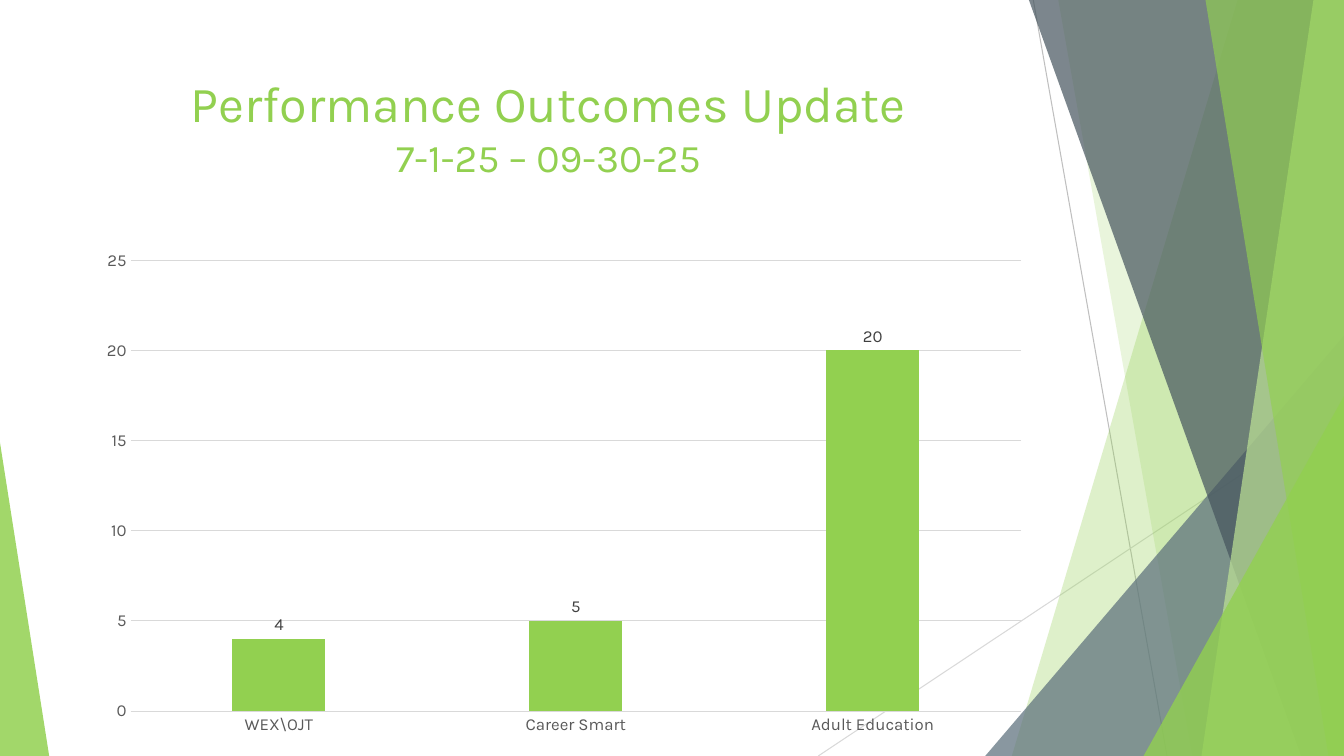
"""Build the performance outcomes slide with its faceted green border."""
import pptx
import pptx.chart.data
import pptx.dml.color
import pptx.enum.chart
import pptx.enum.shapes
import pptx.enum.text
import pptx.oxml
import pptx.oxml.ns
import pptx.util
from lxml import etree
from pptx.dml.color import RGBColor
from pptx.util import Cm

FONT = "Karla"
GREEN = RGBColor(0x92, 0xD0, 0x50)
PALE_GREEN = RGBColor(0xBE, 0xE3, 0x96)
SLATE = RGBColor(0x5C, 0x70, 0x7C)
DARK_SLATE = RGBColor(0x45, 0x54, 0x5D)
GREY = RGBColor(0xBF, 0xBF, 0xBF)
LIGHT_GREY = RGBColor(0xD9, 0xD9, 0xD9)
AXIS_TEXT = RGBColor(0x59, 0x59, 0x59)
LABEL_TEXT = RGBColor(0x40, 0x40, 0x40)

WIDTH, HEIGHT = 33.87, 19.05
CONTENT_LEFT, CONTENT_WIDTH = 1.88, 23.88
PLOT_AREA = {"x": 0.059, "y": 0.021, "w": 0.94, "h": 0.819}


def format_font(font, size, color):
    """Apply the slide's typeface with a size and colour."""
    font.name = FONT
    font.size = pptx.util.Pt(size)
    font.color.rgb = color


def add_text(paragraph, text, size=12, color=GREEN):
    """Append one formatted run to a paragraph."""
    run = paragraph.add_run()
    run.text = text
    format_font(run.font, size, color)


def format_line(line, color):
    """Give a line the slide's thin stroke."""
    line.color.rgb = color
    line.width = pptx.util.Pt(0.75)


def fill_translucent(shape, color, opacity):
    """Fill a facet with a partly transparent colour and no outline."""
    shape.shadow.inherit = False
    shape.line.fill.background()
    shape.fill.solid()
    shape.fill.fore_color.rgb = color
    color_element = next(shape.element.spPr.iter(pptx.oxml.ns.qn("a:srgbClr")))
    alpha = etree.SubElement(color_element, pptx.oxml.ns.qn("a:alpha"))
    alpha.set("val", str(opacity * 1000))


def add_thin_line(slide, start, end, color):
    """Draw a thin straight line between two points."""
    connector = slide.shapes.add_connector(
        pptx.enum.shapes.MSO_CONNECTOR.STRAIGHT, *map(Cm, start + end))
    format_line(connector.line, color)
    etree.SubElement(connector.element.spPr, pptx.oxml.ns.qn("a:effectLst"))


def add_panel(slide, top_left, bottom_left, color, opacity):
    """Draw a slanted panel that reaches the right edge of the slide."""
    points = [(WIDTH, 0), (WIDTH, HEIGHT), (bottom_left, HEIGHT)]
    builder = slide.shapes.build_freeform(Cm(top_left), 0)
    builder.add_line_segments([(Cm(x), Cm(y)) for x, y in points])
    fill_translucent(builder.convert_to_shape(), color, opacity)


def add_corner(slide, width, height, apex, color, opacity):
    """Draw a bottom corner triangle, on the right for apex 1, left for 0."""
    shape = slide.shapes.add_shape(
        pptx.enum.shapes.MSO_SHAPE.ISOSCELES_TRIANGLE,
        Cm(apex * (WIDTH - width)), Cm(HEIGHT - height), Cm(width), Cm(height))
    shape.adjustments[0] = apex
    fill_translucent(shape, color, opacity)


def add_border(slide):
    """Draw the layered facets from back to front."""
    add_thin_line(slide, (26.04, 0), (29.41, HEIGHT), GREY)
    add_thin_line(slide, (WIDTH, 10.24), (20.62, HEIGHT), LIGHT_GREY)
    add_panel(slide, 31.19, 25.5, GREEN, 30)
    add_panel(slide, 26.67, 30.05, GREEN, 20)
    add_corner(slide, 9.04, 10.59, 1, SLATE, 72)
    add_panel(slide, 25.93, 32.79, DARK_SLATE, 70)
    add_panel(slide, 33.1, 30.28, PALE_GREEN, 70)
    add_panel(slide, 30.38, 33.48, GREEN, 65)
    add_corner(slide, 5.05, 9.07, 1, GREEN, 80)
    add_corner(slide, 1.24, 7.9, 0, GREEN, 85)


def add_title(slide):
    """Place the two-line title in front of the border."""
    title = slide.shapes.title
    title.left, title.top = Cm(CONTENT_LEFT), Cm(1.7)
    title.width, title.height = Cm(CONTENT_WIDTH), Cm(3.66)
    frame = title.text_frame
    frame.auto_size = pptx.enum.text.MSO_AUTO_SIZE.NONE
    frame.vertical_anchor = pptx.enum.text.MSO_ANCHOR.TOP
    paragraph = frame.paragraphs[0]
    paragraph.alignment = pptx.enum.text.PP_ALIGN.CENTER
    add_text(paragraph, "Performance Outcomes Update", size=36)
    paragraph.add_line_break()
    add_text(paragraph, "7-1-25 – 09-30-25", size=28)
    slide.shapes.element.append(title.element)


def set_plot_area(chart):
    """Fix the inner plot area as fractions of the chart frame."""
    plot_area = next(chart.element.iter(pptx.oxml.ns.qn("c:plotArea")))
    for layout in plot_area.findall(pptx.oxml.ns.qn("c:layout")):
        plot_area.remove(layout)
    modes = '<c:xMode val="edge"/><c:yMode val="edge"/>'
    sizes = "".join(f'<c:{key} val="{value}"/>' for key, value in PLOT_AREA.items())
    plot_area.insert(0, pptx.oxml.parse_xml(
        f'<c:layout {pptx.oxml.ns.nsdecls("c")}><c:manualLayout>'
        f'<c:layoutTarget val="inner"/>{modes}{sizes}'
        '</c:manualLayout></c:layout>'))


def format_axes(chart):
    """Style the category and value axes."""
    for axis in (chart.category_axis, chart.value_axis):
        axis.major_tick_mark = pptx.enum.chart.XL_TICK_MARK.NONE
        axis.minor_tick_mark = pptx.enum.chart.XL_TICK_MARK.NONE
        format_font(axis.tick_labels.font, 12, AXIS_TEXT)
    format_line(chart.category_axis.format.line, LIGHT_GREY)
    value_axis = chart.value_axis
    value_axis.minimum_scale, value_axis.maximum_scale = 0, 25
    value_axis.major_unit = 5
    value_axis.format.line.fill.background()
    format_line(value_axis.major_gridlines.format.line, LIGHT_GREY)


def add_outcomes_chart(slide):
    """Add the column chart of outcomes by programme."""
    data = pptx.chart.data.CategoryChartData()
    data.categories = ["WEX\\OJT", "Career Smart", "Adult Education"]
    data.add_series("", (4, 5, 20))
    chart = slide.shapes.add_chart(
        pptx.enum.chart.XL_CHART_TYPE.COLUMN_CLUSTERED,
        Cm(CONTENT_LEFT), Cm(6.27), Cm(CONTENT_WIDTH), Cm(13.87), data).chart
    chart.has_title = False
    chart.has_legend = False
    format_font(chart.font, 10, AXIS_TEXT)
    format_axes(chart)
    set_plot_area(chart)
    plot = chart.plots[0]
    plot.vary_by_categories = False
    plot.gap_width, plot.overlap = 219, -27
    series = plot.series[0]
    series.format.fill.solid()
    series.format.fill.fore_color.rgb = GREEN
    labels = series.data_labels
    labels.show_value = True
    labels.position = pptx.enum.chart.XL_LABEL_POSITION.OUTSIDE_END
    format_font(labels.font, 12, LABEL_TEXT)


def main():
    """Build and save the presentation."""
    presentation = pptx.Presentation()
    presentation.slide_width, presentation.slide_height = Cm(WIDTH), Cm(HEIGHT)
    slide = presentation.slides.add_slide(presentation.slide_layouts[5])
    add_border(slide)
    add_title(slide)
    add_outcomes_chart(slide)
    presentation.save("out.pptx")


if __name__ == "__main__":
    main()
